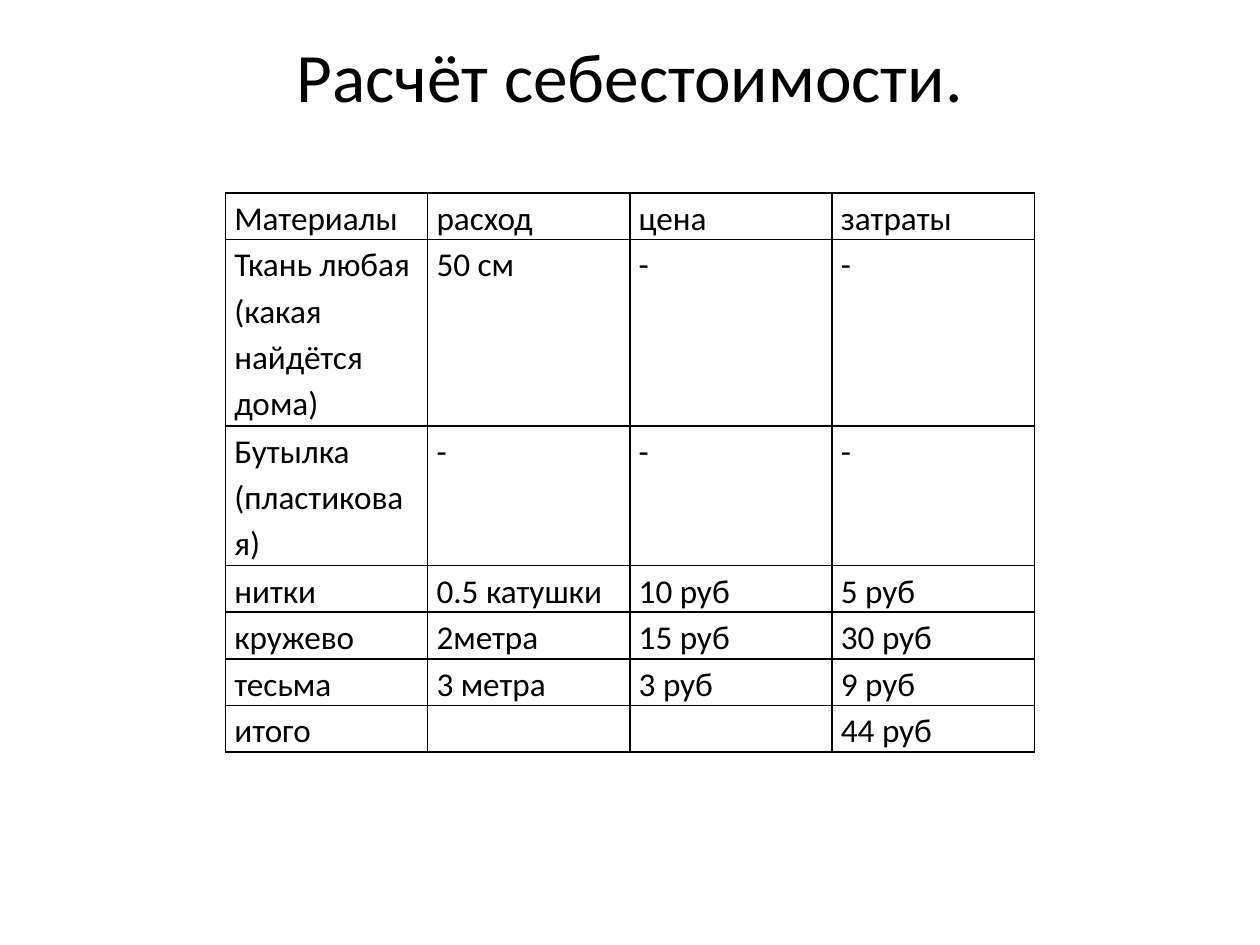
from dataclasses import dataclass

from lxml import etree
from pptx import Presentation
from pptx.dml.color import RGBColor
from pptx.enum import text as t
from pptx.oxml import ns
from pptx.util import Inches, Pt


@dataclass(frozen=True)
class Theme:
    face: str = "Calibri"
    ink: str = "000000"
    head: float = 39.6
    body: float = 19
    rule: float = 1


THEME = Theme()
ROWS = [
    ("Материалы", "расход", "цена", "затраты"),
    ("Ткань любая (какая найдётся дома)", "50 см", "-", "-"),
    ("Бутылка (пластиковая)", "-", "-", "-"),
    ("нитки", "0.5 катушки", "10 руб", "5 руб"),
    ("кружево", "2метра", "15 руб", "30 руб"),
    ("тесьма", "3 метра", "3 руб", "9 руб"),
    ("итого", "", "", "44 руб"),
]
LINES = [1, 4, 3, 1, 1, 1, 1]


def style(par, size):
    font = par.font
    font.name = THEME.face
    font.size = Pt(size)
    font.color.rgb = RGBColor.from_string(THEME.ink)


def border(cell):
    props = cell._tc.get_or_add_tcPr()
    for i, side in enumerate(("lnL", "lnR", "lnT", "lnB")):
        line = etree.Element(ns.qn(f"a:{side}"), w=str(Pt(THEME.rule)))
        fill = etree.SubElement(line, ns.qn("a:solidFill"))
        etree.SubElement(fill, ns.qn("a:srgbClr"), val=THEME.ink)
        props.insert(i, line)


def add_title(slide, box):
    title = slide.shapes.title
    title.left, title.top, title.width, title.height = map(Inches, box)
    frame = title.text_frame
    frame.text = "Расчёт себестоимости.\v"
    frame.auto_size = t.MSO_AUTO_SIZE.NONE
    frame.vertical_anchor = t.MSO_ANCHOR.MIDDLE
    par = frame.paragraphs[0]
    par.alignment = t.PP_ALIGN.CENTER
    style(par, THEME.head)


def fill_cell(cell, words):
    cell.text = words
    cell.fill.background()
    cell.margin_left = cell.margin_right = Inches(0.07)
    cell.margin_top = cell.margin_bottom = 0
    par = cell.text_frame.paragraphs[0]
    par.line_spacing = 1.15
    style(par, THEME.body)
    border(cell)


def add_costs(slide, box):
    left, top, width, height = map(Inches, box)
    count = len(ROWS[0])
    table = slide.shapes.add_table(len(ROWS), count, left, top, width, height).table
    table.first_row = table.horz_banding = False
    for col in table.columns:
        col.width = width // count
    for row, words, lines in zip(table.rows, ROWS, LINES):
        row.height = height * lines // sum(LINES)
        for cell, word in zip(row.cells, words):
            fill_cell(cell, word)


def main():
    deck = Presentation()
    deck.slide_width, deck.slide_height = Inches(10), Inches(7.5)
    slide = deck.slides.add_slide(deck.slide_layouts[5])
    add_title(slide, (0.5, 0.3, 9, 1.25))
    add_costs(slide, (1.79, 1.53, 6.42, 4.44))
    deck.save("out.pptx")


if __name__ == "__main__":
    main()
